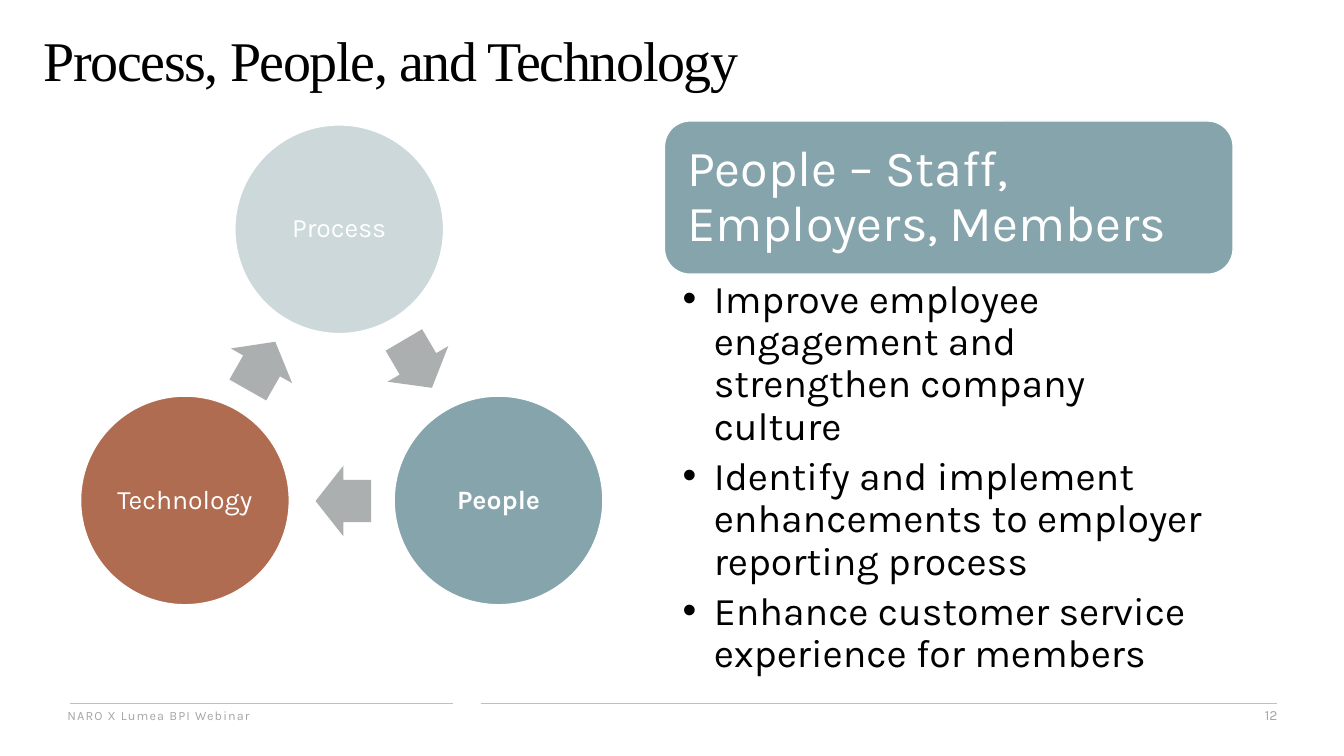
"""Build the slide on process, people and technology."""
import pptx
import pptx.util
import pptx.dml.color
import pptx.enum.shapes
import pptx.enum.text
import pptx.oxml
import pptx.oxml.ns

Pt = pptx.util.Pt
Inches = pptx.util.Inches
Kind = pptx.enum.shapes.MSO_SHAPE
Align = pptx.enum.text.PP_ALIGN
Mid = pptx.enum.text.MSO_ANCHOR.MIDDLE
Top = pptx.enum.text.MSO_ANCHOR.TOP

HUES = {"ink": "000000", "white": "FFFFFF", "rule": "BFBFBF", "foot": "A6A6A6",
        "mist": "CCD8D9", "teal": "86A4AC", "rust": "B06C50", "arrow": "ABAFB0"}
HUES = {name: pptx.dml.color.RGBColor.from_string(code) for name, code in HUES.items()}

deck = pptx.Presentation()
deck.slide_width, deck.slide_height = Inches(13.33), Inches(7.5)
slide = deck.slides.add_slide(deck.slide_layouts[1])
shapes = slide.shapes


def area(*shares):
    """Turn left, top, width and height in percent of the slide into lengths."""
    sides = (deck.slide_width, deck.slide_height) * 2
    return [round(side * share / 100) for side, share in zip(sides, shares)]


def write(shape, lines, size, hue, align=Align.LEFT, face="Karla", bold=False,
          lead=0.9, after=0, track=0, pads=(0.1, 0.05, 0.1, 0.05), anchor=Mid):
    """Fill the text frame of a shape and format it."""
    frame = shape.text_frame
    form = {"word_wrap": True, "auto_size": pptx.enum.text.MSO_AUTO_SIZE.NONE,
            "vertical_anchor": anchor}
    names = ("margin_left", "margin_top", "margin_right", "margin_bottom")
    form.update(zip(names, map(Inches, pads)))
    for key, value in form.items():
        setattr(frame, key, value)
    frame.text = "\n".join(lines)
    for para in frame.paragraphs:
        look = {"alignment": align, "line_spacing": lead,
                "space_before": Pt(0), "space_after": Pt(after)}
        for key, value in look.items():
            setattr(para, key, value)
        run = para.runs[0]
        for key, value in {"name": face, "size": Pt(size), "bold": bold}.items():
            setattr(run.font, key, value)
        run.font.color.rgb = HUES[hue]
        if track:
            run._r.get_or_add_rPr().set("spc", str(track))


title, body = shapes.title, slide.placeholders[1]
for holder, shares in ((title, (2.5, 4.4, 55.4, 21.9)),
                       (body, (49.44, 36.27, 42.31, 53.2))):
    holder.left, holder.top, holder.width, holder.height = area(*shares)

write(title, ["Process, People, and Technology"], 40, "ink",
      face="Times New Roman", lead=0.8, track=-100, anchor=Top)
write(body, ["Improve employee engagement and strengthen company culture",
             "Identify and implement enhancements to employer reporting process",
             "Enhance customer service experience for members"],
      28, "ink", after=5.6, pads=(0.18, 0.05, 0.28, 0.05), anchor=Top)
for para in body.text_frame.paragraphs:
    props = para._p.get_or_add_pPr()
    props.set("marL", str(Inches(0.31)))
    props.set("indent", str(-Inches(0.31)))

for start, end in ((5.18, 33.68), (35.78, 95.05)):
    rule = shapes.add_connector(pptx.enum.shapes.MSO_CONNECTOR.STRAIGHT,
                                *area(start, 93.07, end, 93.07))
    rule.line.color.rgb = HUES["rule"]
    rule.line.width = Pt(0.5)
    rule._element.spPr.append(
        pptx.oxml.parse_xml(f"<a:effectLst {pptx.oxml.ns.nsdecls('a')}/>"))

for text, left, width, size, align, track in (
        ("NARO X Lumea BPI Webinar", 4.28, 62.87, 9, Align.LEFT, 80),
        ("12", 73.29, 22.5, 10, Align.RIGHT, 0)):
    note = shapes.add_textbox(*area(left, 92.93, width, 3.33))
    write(note, [text], size, "foot", align, lead=1, track=track)

for text, hue, left, top, bold in (("Process", "mist", 17.48, 16.53, False),
                                   ("People", "teal", 29.33, 52.4, True),
                                   ("Technology", "rust", 6, 52.4, False)):
    disc = shapes.add_shape(Kind.OVAL, *area(left, top, 15.53, 27.6))
    disc.shadow.inherit = False
    disc.fill.solid()
    disc.fill.fore_color.rgb = HUES[hue]
    disc.line.color.rgb = HUES["white"]
    disc.line.width = Pt(1)
    write(disc, [text], 19, "white", Align.CENTER, bold=bold, pads=(0.03,) * 4)

for left, top, turn in ((29.03, 43.47, 59.6), (23.48, 61.6, 180), (17.4, 43.73, 299.6)):
    arrow = shapes.add_shape(Kind.RIGHT_ARROW, *area(left, top, 4.13, 9.33))
    arrow.shadow.inherit = False
    arrow.rotation = turn
    arrow.adjustments[0], arrow.adjustments[1] = 0.6, 0.5
    arrow.fill.solid()
    arrow.fill.fore_color.rgb = HUES["arrow"]
    arrow.line.fill.background()

card = shapes.add_shape(Kind.ROUNDED_RECTANGLE, *area(49.44, 16, 42.31, 20.27))
card.shadow.inherit = False
card.fill.solid()
card.fill.fore_color.rgb = HUES["teal"]
card.line.color.rgb = HUES["white"]
card.line.width = Pt(1)
write(card, ["People – Staff, Employers, Members"], 36, "white", pads=(0.15,) * 4)

deck.save("out.pptx")
